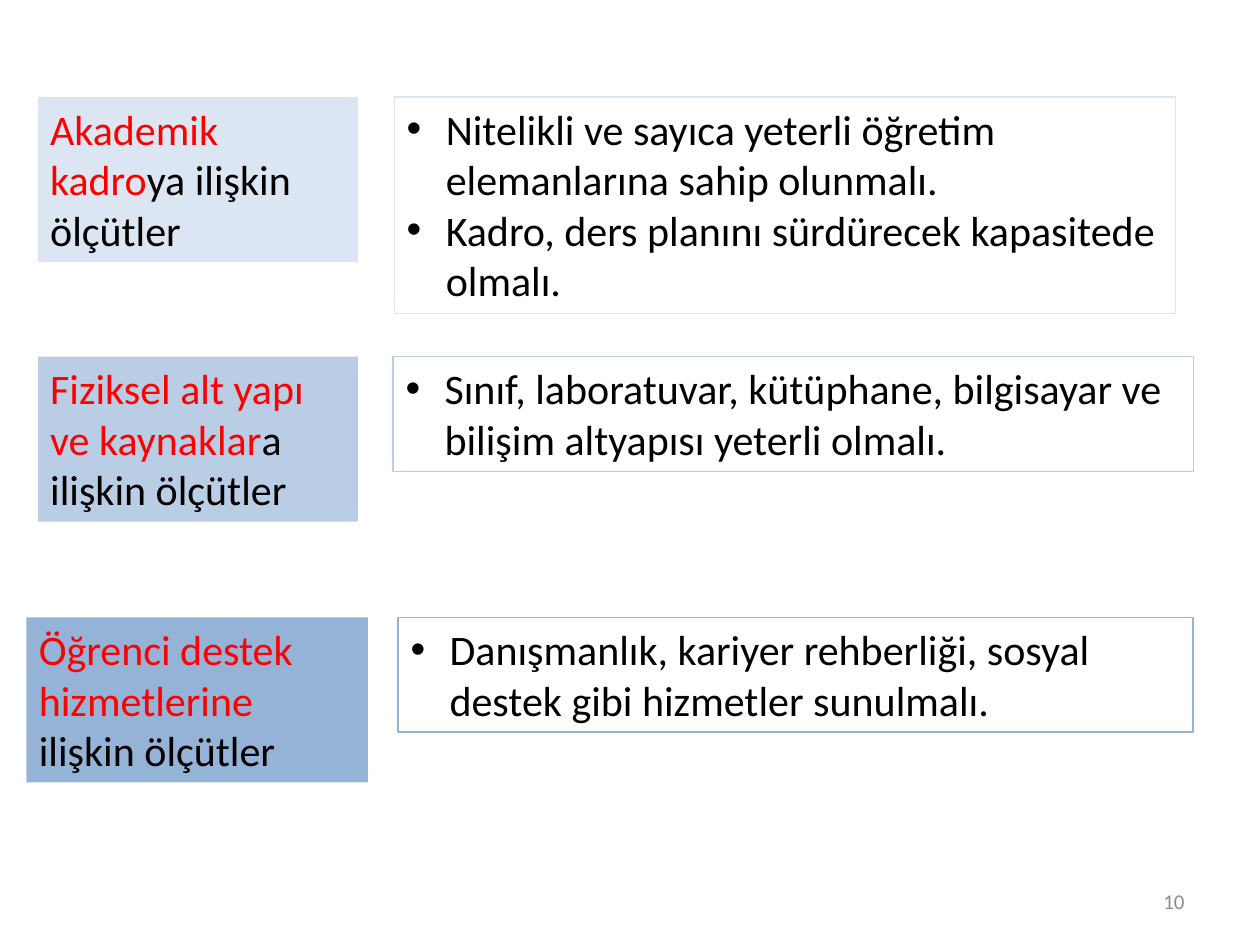
from lxml.etree import SubElement
from pptx import Presentation
from pptx.dml.color import RGBColor
from pptx.enum.text import MSO_ANCHOR, MSO_AUTO_SIZE, PP_ALIGN
from pptx.oxml.ns import qn
from pptx.util import Inches, Pt

FONT = "Calibri"
BLACK, RED, GREY = "000000", "FF0000", "8C8C8C"
INDENT = Inches(0.31)

# Each row: top, colour, label box (left, width, height), label runs,
# criteria box (left, width, height), criteria
ROWS = [
    (0.77, "DCE6F2", (0.3, 2.54, 1.31),
     [("Akademik kadro", RED), ("ya ilişkin ölçütler", BLACK)],
     (3.13, 6.2, 1.72),
     ["Nitelikli ve sayıca yeterli öğretim elemanlarına sahip olunmalı.",
      "Kadro, ders planını sürdürecek kapasitede olmalı."]),
    (2.83, "B9CDE5", (0.3, 2.54, 1.31),
     [("Fiziksel alt yapı ve kaynaklar", RED), ("a ilişkin ölçütler", BLACK)],
     (3.12, 6.35, 0.91),
     ["Sınıf, laboratuvar, kütüphane, bilgisayar ve bilişim altyapısı yeterli olmalı."]),
    (4.9, "95B3D7", (0.21, 2.71, 1.31),
     [("Öğrenci destek hizmetlerine ", RED), ("ilişkin ölçütler", BLACK)],
     (3.16, 6.31, 0.91),
     ["Danışmanlık, kariyer rehberliği, sosyal destek gibi hizmetler sunulmalı."]),
]


def rgb(value):
    return RGBColor.from_string(value)


def add_run(paragraph, text, color, size=24):
    run = paragraph.add_run()
    run.text = text
    run.font.name = FONT
    run.font.size = Pt(size)
    run.font.color.rgb = rgb(color)


def add_bullet(paragraph):
    properties = paragraph._p.get_or_add_pPr()
    properties.set("marL", str(INDENT))
    properties.set("indent", str(-INDENT))
    SubElement(properties, qn("a:buFont"), typeface="Arial")
    SubElement(properties, qn("a:buChar"), char="•")


def add_text_box(slide, left, top, width, height):
    box = slide.shapes.add_textbox(
        Inches(left), Inches(top), Inches(width), Inches(height))
    box.text_frame.word_wrap = True
    return box


def add_label(slide, left, top, width, height, color, runs):
    box = add_text_box(slide, left, top, width, height)
    box.text_frame.auto_size = MSO_AUTO_SIZE.SHAPE_TO_FIT_TEXT
    box.fill.solid()
    box.fill.fore_color.rgb = rgb(color)
    for text, text_color in runs:
        add_run(box.text_frame.paragraphs[0], text, text_color)


def add_criteria(slide, left, top, width, height, color, criteria):
    box = add_text_box(slide, left, top, width, height)
    frame = box.text_frame
    frame.auto_size = MSO_AUTO_SIZE.SHAPE_TO_FIT_TEXT
    box.line.color.rgb = rgb(color)
    box.line.width = Pt(0.75)
    for index, text in enumerate(criteria):
        paragraph = frame.add_paragraph() if index else frame.paragraphs[0]
        add_bullet(paragraph)
        add_run(paragraph, text, BLACK)


def add_page_number(slide, left, top, width, height, number):
    frame = add_text_box(slide, left, top, width, height).text_frame
    frame.vertical_anchor = MSO_ANCHOR.MIDDLE
    paragraph = frame.paragraphs[0]
    paragraph.alignment = PP_ALIGN.RIGHT
    add_run(paragraph, number, GREY, size=12)


def main():
    presentation = Presentation()
    presentation.slide_width = Inches(10)
    presentation.slide_height = Inches(7.5)
    slide = presentation.slides.add_slide(presentation.slide_layouts[6])

    add_page_number(slide, 7.17, 6.95, 2.33, 0.4, "10")
    for top, color, label_box, runs, criteria_box, criteria in ROWS:
        left, width, height = label_box
        add_label(slide, left, top, width, height, color, runs)
        left, width, height = criteria_box
        add_criteria(slide, left, top, width, height, color, criteria)

    presentation.save("out.pptx")


if __name__ == "__main__":
    main()
